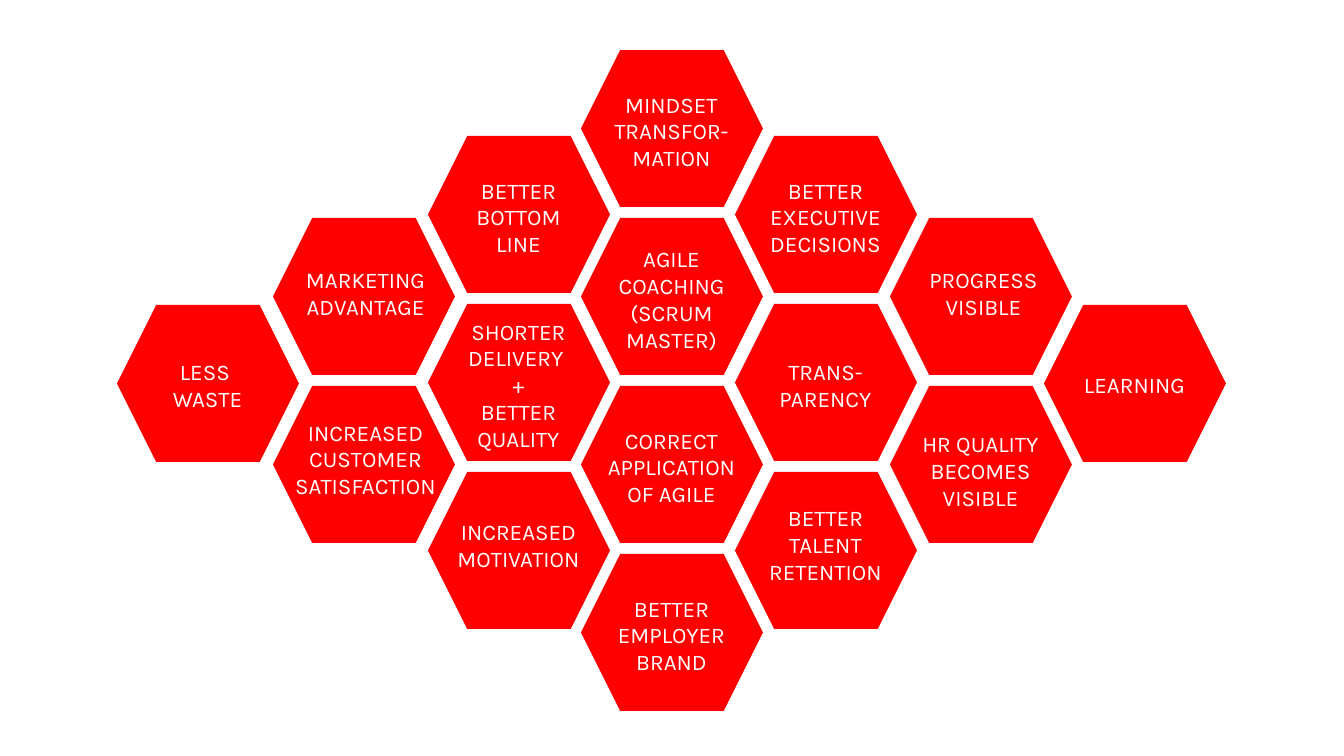
import dataclasses

import pptx
import pptx.dml.color
import pptx.enum.shapes
import pptx.enum.text
import pptx.util

EMU_PER_PX = 914400 / 134.4


def px(length):
    return pptx.util.Emu(round(length * EMU_PER_PX))


@dataclasses.dataclass(frozen=True)
class Theme:
    cell: str = "FF0000"
    label: str = "FFFFFF"
    font: str = "Karla"
    label_size: int = 12


class Honeycomb:
    """Holds the theme and the slide, and draws the cells on it."""

    CELL_WIDTH, CELL_HEIGHT, ROW_STEP = 182, 157, 168
    LABEL_WIDTH, LABEL_HEIGHT = 173, 62

    def __init__(self, theme, slide):
        self.theme = theme
        self.slide = slide

    def hexagon(self, group, left, top):
        cell = group.shapes.add_shape(
            pptx.enum.shapes.MSO_SHAPE.HEXAGON,
            px(left), px(top), px(self.CELL_WIDTH), px(self.CELL_HEIGHT))
        cell.shadow.inherit = False
        cell.fill.solid()
        cell.fill.fore_color.rgb = pptx.dml.color.RGBColor.from_string(self.theme.cell)
        cell.line.fill.background()

    def label(self, group, left, top, lines):
        frame = group.shapes.add_textbox(
            px(left), px(top), px(self.LABEL_WIDTH), px(self.LABEL_HEIGHT)).text_frame
        frame.word_wrap = True
        frame.vertical_anchor = pptx.enum.text.MSO_ANCHOR.MIDDLE
        for number, line in enumerate(lines):
            paragraph = frame.add_paragraph() if number else frame.paragraphs[0]
            paragraph.alignment = pptx.enum.text.PP_ALIGN.CENTER
            run = paragraph.add_run()
            run.text = line
            run.font.name = self.theme.font
            run.font.size = pptx.util.Pt(self.theme.label_size)
            run.font.color.rgb = pptx.dml.color.RGBColor.from_string(self.theme.label)

    def column(self, left, first_top, benefits):
        for row, (lines, indent, drop) in enumerate(benefits):
            top = first_top + row * self.ROW_STEP
            group = self.slide.shapes.add_group_shape()
            self.hexagon(group, left, top)
            self.label(group, left + indent, top + drop, lines)


# Columns from left to right: left, top of first cell,
# then (lines, label indent, label drop) for each cell
COLUMNS = [
    (117, 305, [(["LESS ", "WASTE"], 4, 49)]),
    (273, 218, [
        (["MARKETING", "ADVANTAGE"], 6, 44),
        (["INCREASED", "CUSTOMER", "SATISFACTION"], 6, 42),
    ]),
    (428, 136, [
        (["BETTER", "BOTTOM", "LINE"], 4, 50),
        (["SHORTER", "DELIVERY ", "+", "BETTER QUALITY"], 4, 50),
        (["INCREASED", "MOTIVATION"], 4, 42),
    ]),
    (581, 50, [
        (["MINDSET TRANSFOR-MATION"], 4, 50),
        (["AGILE", "COACHING", "(SCRUM", "MASTER)"], 4, 50),
        (["CORRECT", "APPLICATION", "OF AGILE"], 4, 50),
        (["BETTER EMPLOYER", "BRAND"], 4, 50),
    ]),
    (735, 136, [
        (["BETTER", "EXECUTIVE", "DECISIONS"], 4, 50),
        (["TRANS-PARENCY"], 4, 50),
        (["BETTER", "TALENT", "RETENTION"], 4, 42),
    ]),
    (890, 218, [
        (["PROGRESS", "VISIBLE"], 7, 44),
        (["HR QUALITY", "BECOMES VISIBLE"], 4, 54),
    ]),
    (1044, 305, [(["LEARNING"], 4, 49)]),
]


def main():
    # Blank slide
    deck = pptx.Presentation()
    deck.slide_width, deck.slide_height = px(1344), px(756)
    slide = deck.slides.add_slide(deck.slide_layouts[6])

    # Benefits
    honeycomb = Honeycomb(Theme(), slide)
    for left, first_top, benefits in COLUMNS:
        honeycomb.column(left, first_top, benefits)

    deck.save("out.pptx")


if __name__ == "__main__":
    main()
